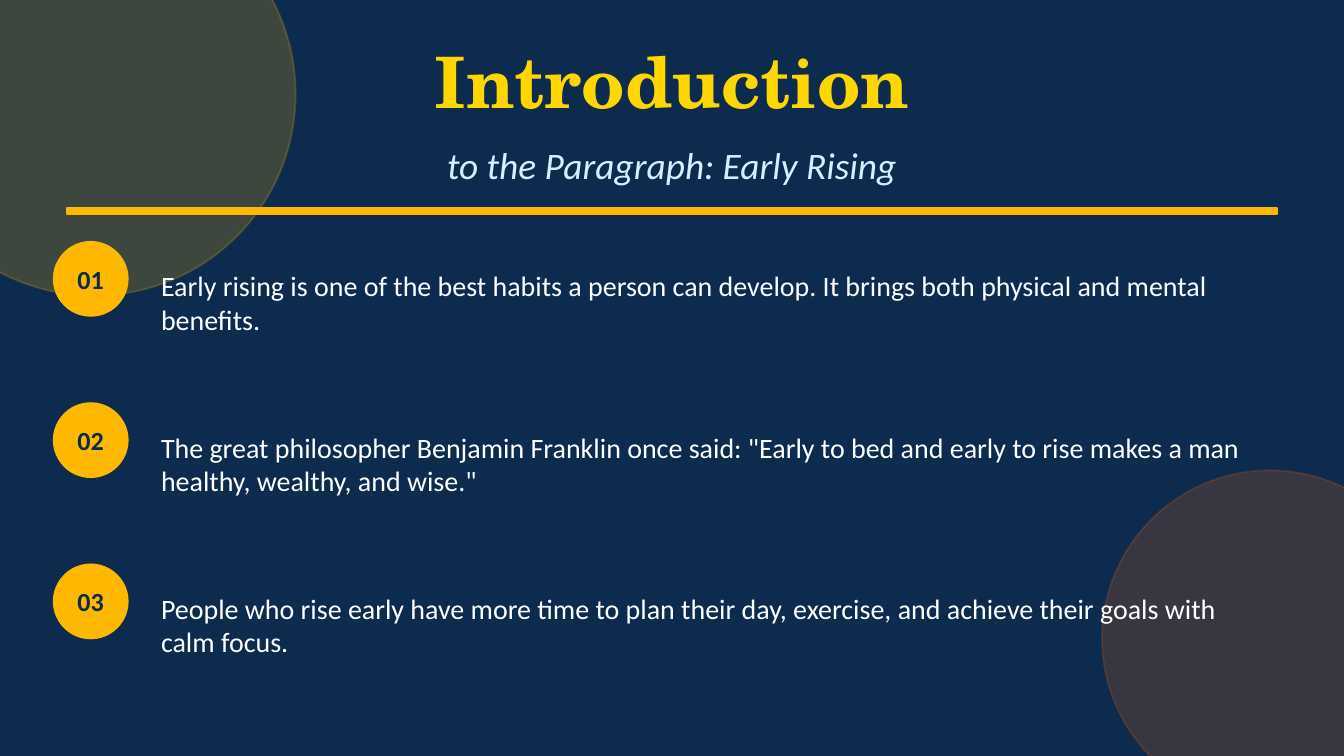
from dataclasses import dataclass

from lxml import etree
from pptx import Presentation
from pptx.dml.color import RGBColor
from pptx.enum.shapes import MSO_SHAPE
from pptx.enum.text import MSO_ANCHOR, PP_ALIGN
from pptx.oxml.ns import qn
from pptx.util import Inches, Pt

OVAL, RECT = MSO_SHAPE.OVAL, MSO_SHAPE.RECTANGLE
LEFT, CENTER = PP_ALIGN.LEFT, PP_ALIGN.CENTER
MIDDLE = MSO_ANCHOR.MIDDLE
TITLE_ONLY = 5


@dataclass(frozen=True)
class Theme:
    navy: str = "0D2B4E"
    amber: str = "FFB800"
    rust: str = "E8630A"
    gold: str = "FFD700"
    ice: str = "D6EEFF"
    white: str = "FFFFFF"
    head: str = "TeX Gyre Schola"
    body: str = "Calibri"
    title: int = 38
    sub: int = 20
    text: int = 15
    num: int = 14


THEME = Theme()

POINTS = [
    "Early rising is one of the best habits a person can develop. "
    "It brings both physical and mental benefits.",
    "The great philosopher Benjamin Franklin once said: "
    '"Early to bed and early to rise makes a man healthy, wealthy, and wise."',
    "People who rise early have more time to plan their day, exercise, "
    "and achieve their goals with calm focus.",
]


def place(shape, x, y, w, h):
    shape.left, shape.top = Inches(x), Inches(y)
    shape.width, shape.height = Inches(w), Inches(h)


def write(shape, text, size, color, align=CENTER, font=THEME.body,
          bold=False, italic=False):
    frame = shape.text_frame
    frame.word_wrap = True
    frame.vertical_anchor = MIDDLE
    para = frame.paragraphs[0]
    para.alignment = align
    run = para.add_run()
    run.text = text
    run.font.name, run.font.size = font, Pt(size)
    run.font.bold, run.font.italic = bold, italic
    run.font.color.rgb = RGBColor.from_string(color)


def add_text(slide, box, *args, **style):
    shape = slide.shapes.add_textbox(*map(Inches, box))
    write(shape, *args, **style)


def add_solid(slide, kind, box, color, alpha=100):
    """Add a shape with fill and line of one colour; alpha in percent."""
    shape = slide.shapes.add_shape(kind, *map(Inches, box))
    shape.shadow.inherit = False
    shape.line.width = Pt(1)
    for fill in (shape.fill, shape.line.fill):
        fill.solid()
        fill.fore_color.rgb = RGBColor.from_string(color)
    if alpha < 100:
        for tint in shape._element.spPr.iter(qn("a:srgbClr")):
            etree.SubElement(tint, qn("a:alpha"), val=str(alpha * 1000))
    return shape


def add_point(slide, num, text, top):
    badge = add_solid(slide, OVAL, (0.4, top, 0.55, 0.55), THEME.amber)
    frame = badge.text_frame
    frame.margin_left = frame.margin_right = 0
    frame.margin_top = frame.margin_bottom = 0
    write(badge, f"{num:02d}", THEME.num, THEME.navy, bold=True)
    add_text(slide, (1.1, top - 0.05, 8.4, 1), text, THEME.text,
             THEME.white, align=LEFT)


def main():
    deck = Presentation()
    # Widescreen, 16:9
    deck.slide_width = Inches(10)
    deck.slide_height = Inches(10 * 9 / 16)
    slide = deck.slides.add_slide(deck.slide_layouts[TITLE_ONLY])
    back = slide.background.fill
    back.solid()
    back.fore_color.rgb = RGBColor.from_string(THEME.navy)

    # Corner circles
    add_solid(slide, OVAL, (-0.8, -0.8, 3, 3), THEME.amber, alpha=20)
    add_solid(slide, OVAL, (8.2, 3.5, 2.5, 2.5), THEME.rust, alpha=20)

    # Heading and rule
    title = slide.shapes.title
    place(title, 0.5, 0.2, 9, 0.8)
    write(title, "Introduction", THEME.title, THEME.gold,
          font=THEME.head, bold=True)
    add_text(slide, (0.5, 0.95, 9, 0.55), "to the Paragraph: Early Rising",
             THEME.sub, THEME.ice, italic=True)
    add_solid(slide, RECT, (0.5, 1.55, 9, 0.04), THEME.amber)

    # Numbered points
    for i, text in enumerate(POINTS):
        add_point(slide, i + 1, text, 1.8 + 1.2 * i)

    deck.save("out.pptx")


if __name__ == "__main__":
    main()
